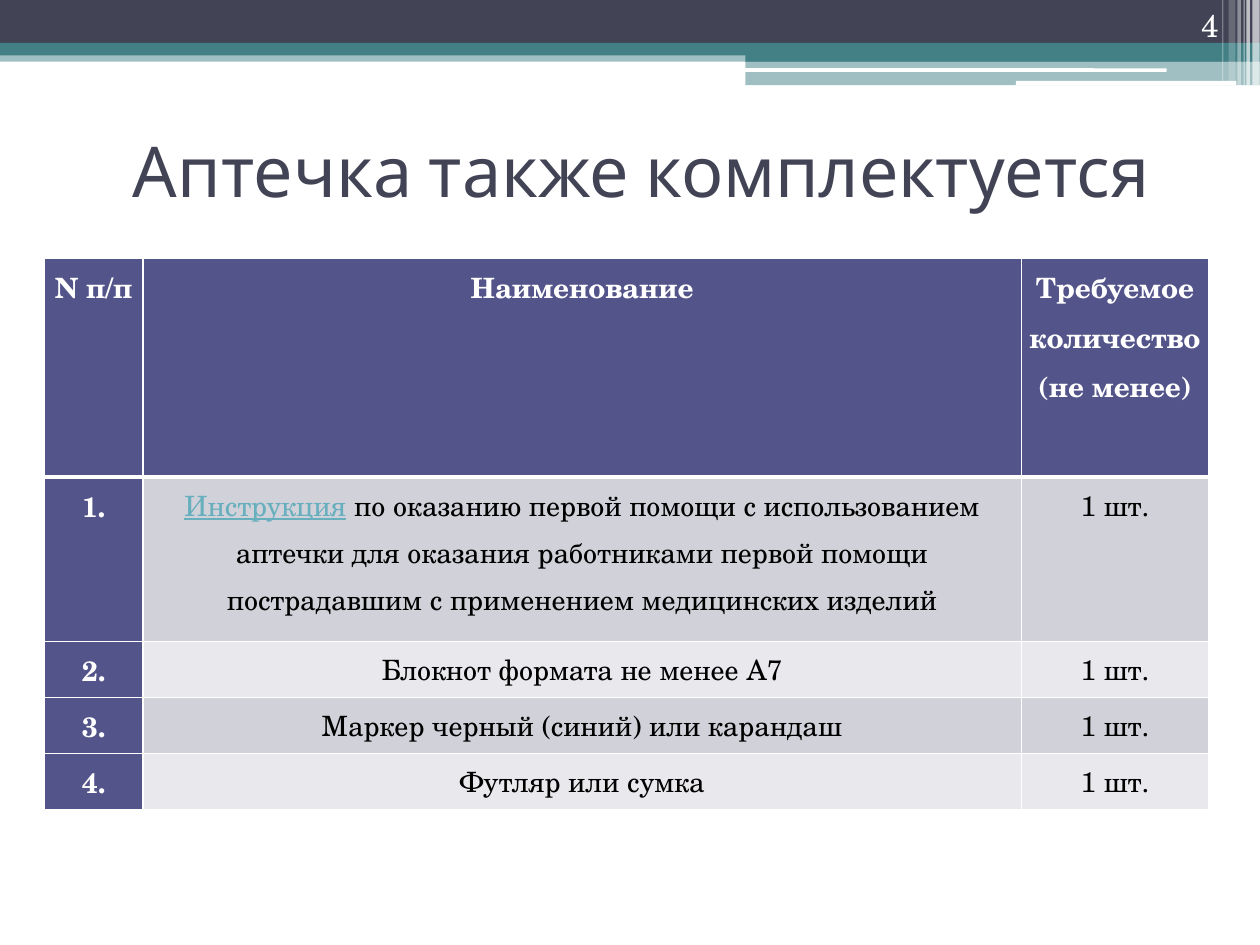
from lxml import etree
from pptx import Presentation
from pptx.dml.color import RGBColor
from pptx.enum.shapes import MSO_SHAPE
from pptx.enum.text import MSO_ANCHOR, PP_ALIGN
from pptx.oxml.ns import qn
from pptx.util import Pt

SLATE = RGBColor(0x42, 0x44, 0x56)
TEAL = RGBColor(0x43, 0x80, 0x86)
INDIGO = RGBColor(0x53, 0x54, 0x8A)
BAND_DARK = RGBColor(0xD1, 0xD1, 0xDA)
BAND_LIGHT = RGBColor(0xE9, 0xE9, 0xED)
LINK = RGBColor(0x67, 0xAF, 0xBD)
BLACK = RGBColor(0, 0, 0)
WHITE = RGBColor(0xFF, 0xFF, 0xFF)

TITLE_FONT = "Karla"
BODY_FONT = "TeX Gyre Schola"

BANDS = [
    (0, 28.8, 720, 6.48, TEAL, 50),
    (0, 0, 720, 24.48, SLATE, 100),
    (0, 24.48, 720, 7.2, TEAL, 100),
    (425.9, 28.08, 294.1, 7.2, TEAL, 100),
    (425.9, 34.7, 294.1, 14, TEAL, 50),
]
RULES = [(425.5, 39, 241.2, 2), (580.5, 46.2, 126, 2.6)]
STRIPES = [
    (715.6, 4.2, 48.7, 65),
    (712.2, 2, 48.7, 65),
    (710.6, 0.7, 48.7, 60),
    (707.1, 2, 48.7, 40),
    (702, 4, 46.2, 20),
    (698.4, 0.7, 46.2, 30),
]

COLUMN_WIDTHS = [56.2, 502.1, 106.7]
ROW_HEIGHTS = [125, 94, 32, 32, 32]
HEADERS = ["N п/п", "Наименование", "Требуемое количество (не менее)"]
LINKED_WORD = "Инструкция"
ITEMS = [
    "Инструкция по оказанию первой помощи с использованием аптечки для оказания "
    "работниками первой помощи пострадавшим с применением медицинских изделий",
    "Блокнот формата не менее А7",
    "Маркер черный (синий) или карандаш",
    "Футляр или сумка",
]
QUANTITY = "1 шт."


def set_attributes(target, values):
    """Set each named attribute of the target."""
    for name, value in values.items():
        setattr(target, name, value)


def add_run(paragraph, text, color, **font_values):
    """Append a run with its colour and font values."""
    run = paragraph.add_run()
    run.text = text
    run.font.color.rgb = color
    set_attributes(run.font, font_values)


def add_bar(slide, kind, box, color, opacity=100):
    """Draw a filled bar without outline, optionally see-through."""
    shape = slide.shapes.add_shape(kind, *map(Pt, box))
    shape.shadow.inherit = False
    shape.line.fill.background()
    shape.fill.solid()
    shape.fill.fore_color.rgb = color
    if opacity < 100:
        color_element = shape._element.spPr.find(f".//{qn('a:srgbClr')}")
        etree.SubElement(color_element, qn("a:alpha"), val=str(opacity * 1000))


def add_header(slide, left, top):
    """Draw the bands, rules and edge stripes along the top."""
    for x, y, width, height, color, opacity in BANDS:
        box = (left + x, top + y, width, height)
        add_bar(slide, MSO_SHAPE.RECTANGLE, box, color, opacity)
    for x, y, width, height in RULES:
        box = (left + x, top + y, width, height)
        add_bar(slide, MSO_SHAPE.ROUNDED_RECTANGLE, box, WHITE)
    for x, width, height, opacity in STRIPES:
        box = (left + x, top, width, height)
        add_bar(slide, MSO_SHAPE.RECTANGLE, box, WHITE, opacity)


def place_title(slide, left, top, width, height):
    """Move the title placeholder into its box and fill it."""
    title = slide.shapes.title
    set_attributes(title, {"left": Pt(left), "top": Pt(top),
                           "width": Pt(width), "height": Pt(height)})
    set_attributes(title.text_frame, {"word_wrap": True,
                                      "vertical_anchor": MSO_ANCHOR.MIDDLE})
    paragraph = title.text_frame.paragraphs[0]
    paragraph.alignment = PP_ALIGN.CENTER
    add_run(paragraph, "Аптечка также комплектуется", SLATE,
            name=TITLE_FONT, size=Pt(40))


def set_borders(cell, bottom_width):
    """Give the cell white borders with the stated bottom width."""
    properties = cell._tc.get_or_add_tcPr()
    widths = {"a:lnL": 1, "a:lnR": 1, "a:lnT": 1, "a:lnB": bottom_width}
    for index, (tag, width) in enumerate(widths.items()):
        line = etree.Element(qn(tag), w=str(Pt(width)))
        fill = etree.SubElement(line, qn("a:solidFill"))
        etree.SubElement(fill, qn("a:srgbClr"), val=str(WHITE))
        properties.insert(index, line)


def fill_cell(cell, text, row, column):
    """Write and format one table cell by its row and column."""
    is_heading = row == 0 or column == 0
    band = BAND_DARK if row % 2 else BAND_LIGHT
    cell.fill.solid()
    cell.fill.fore_color.rgb = INDIGO if is_heading else band
    margins = ("margin_left", "margin_top", "margin_right", "margin_bottom")
    set_attributes(cell, dict.fromkeys(margins, Pt(0.72)))
    paragraph = cell.text_frame.paragraphs[0]
    set_attributes(paragraph, {"alignment": PP_ALIGN.CENTER,
                               "line_spacing": 1.15, "space_after": Pt(10)})
    font_values = {"name": BODY_FONT, "size": Pt(16), "bold": is_heading}
    if text.startswith(LINKED_WORD):
        add_run(paragraph, LINKED_WORD, LINK, underline=True, **font_values)
        text = text.removeprefix(LINKED_WORD)
    add_run(paragraph, text, WHITE if is_heading else BLACK, **font_values)
    if row == 0:
        set_borders(cell, 3)
    else:
        set_borders(cell, 1)
        if row == 1:
            cell._tc.tcPr.find(qn("a:lnT")).set("w", str(Pt(3)))


def add_kit_table(slide, left, top):
    """Build the table of kit contents at the given corner."""
    rows = [HEADERS] + [[f"{number}.", item, QUANTITY]
                        for number, item in enumerate(ITEMS, 1)]
    frame = slide.shapes.add_table(
        len(rows), len(HEADERS), Pt(left), Pt(top),
        Pt(sum(COLUMN_WIDTHS)), Pt(sum(ROW_HEIGHTS)))
    table = frame.table
    for column, width in zip(table.columns, COLUMN_WIDTHS):
        column.width = Pt(width)
    for row, height in zip(table.rows, ROW_HEIGHTS):
        row.height = Pt(height)
    for row_index, texts in enumerate(rows):
        for column_index, text in enumerate(texts):
            cell = table.cell(row_index, column_index)
            fill_cell(cell, text, row_index, column_index)


def add_page_number(slide, left, top, width, height):
    """Write the page number in the header."""
    box = slide.shapes.add_textbox(Pt(left), Pt(top), Pt(width), Pt(height))
    set_attributes(box.text_frame, {"word_wrap": True,
                                    "vertical_anchor": MSO_ANCHOR.BOTTOM})
    paragraph = box.text_frame.paragraphs[0]
    paragraph.alignment = PP_ALIGN.RIGHT
    add_run(paragraph, "4", WHITE, name=BODY_FONT, size=Pt(18))


def main():
    """Build and save the presentation."""
    presentation = Presentation()
    set_attributes(presentation, {"slide_width": Pt(720),
                                  "slide_height": Pt(540)})
    slide = presentation.slides.add_slide(presentation.slide_layouts[5])
    add_header(slide, 0, 0)
    place_title(slide, 42.5, 54.7, 648, 84.2)
    add_kit_table(slide, 25.5, 147.6)
    add_page_number(slide, 643.7, 0, 59.8, 28.8)
    presentation.save("out.pptx")


if __name__ == "__main__":
    main()
